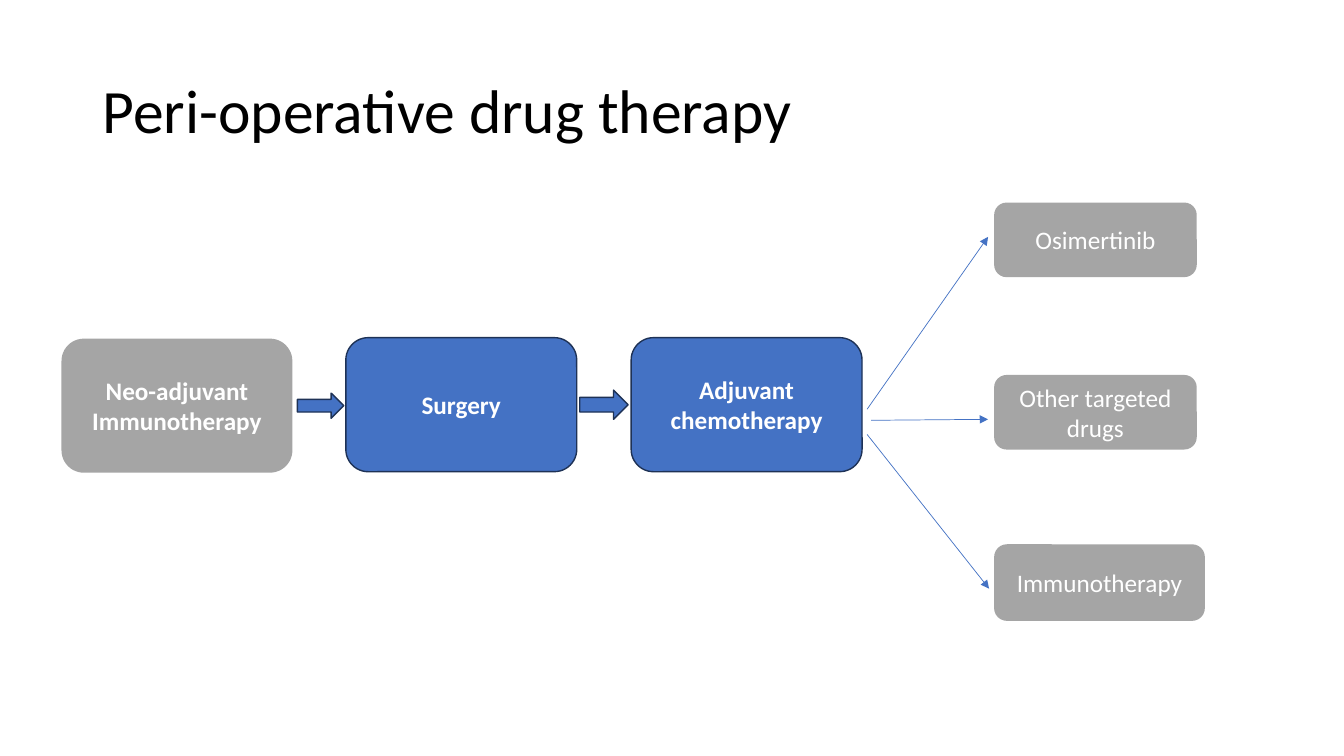
from lxml import etree
from pptx import Presentation
from pptx import util as u
from pptx.dml.color import RGBColor
from pptx.enum import shapes, text
from pptx.oxml.ns import qn

PX = 9144  # 100 px to the inch
BLUE, NAVY, GREY = "4472C4", "1E3256", "A5A5A5"
WHITE, BLACK = "FFFFFF", "000000"


def px(*lengths):
    return [u.Emu(length * PX) for length in lengths]


def color(hex_code):
    return RGBColor.from_string(hex_code)


def write(frame, lines, size, hex_code, align, bold=False):
    frame.word_wrap = True
    frame.vertical_anchor = text.MSO_ANCHOR.MIDDLE
    for i, line in enumerate(lines):
        paragraph = frame.paragraphs[0] if i == 0 else frame.add_paragraph()
        paragraph.text = line
        paragraph.alignment = align
        font = paragraph.font
        font.name, font.size, font.bold = "Calibri", u.Pt(size), bold
        font.color.rgb = color(hex_code)


def add_title(slide, title):
    heading = slide.shapes.add_textbox(*px(92, 40, 1150, 145)).text_frame
    write(heading, [title], 44, BLACK, text.PP_ALIGN.LEFT)
    heading.paragraphs[0].line_spacing = 0.9


def add_filled(slide, preset, bounds, fill, outline=None):
    shape = slide.shapes.add_shape(preset, *px(*bounds))
    shape.shadow.inherit = False
    shape.fill.solid()
    shape.fill.fore_color.rgb = color(fill)
    if outline:
        shape.line.color.rgb = color(outline)
        shape.line.width = u.Pt(1)
    else:
        shape.line.fill.background()
    return shape


def add_box(slide, bounds, lines, fill, outline=None, bold=False):
    box = add_filled(slide, shapes.MSO_SHAPE.ROUNDED_RECTANGLE, bounds, fill, outline)
    write(box.text_frame, lines, 18, WHITE, text.PP_ALIGN.CENTER, bold)


def add_block_arrow(slide, bounds):
    add_filled(slide, shapes.MSO_SHAPE.RIGHT_ARROW, bounds, BLUE, NAVY)


def add_thin_arrow(slide, start, end):
    arrow = slide.shapes.add_connector(
        shapes.MSO_CONNECTOR.STRAIGHT, *px(*start, *end))
    arrow.line.color.rgb = color(BLUE)
    arrow.line.width = u.Pt(0.5)
    etree.SubElement(arrow.line._get_or_add_ln(), qn("a:tailEnd"), type="triangle")
    etree.SubElement(arrow._element.spPr, qn("a:effectLst"))


def main():
    prs = Presentation()
    prs.slide_width, prs.slide_height = px(1333, 750)
    slide = prs.slides.add_slide(prs.slide_layouts[6])
    add_title(slide, "Peri-operative drug therapy")

    stages = [
        (61, 336, ["Neo-adjuvant", "Immunotherapy"], GREY, None),
        (343, 335, ["Surgery"], BLUE, NAVY),
        (626, 335, ["Adjuvant chemotherapy"], BLUE, NAVY),
    ]
    for left, top, lines, fill, outline in stages:
        add_box(slide, (left, top, 229, 133), lines, fill, outline, bold=True)
    for bounds in [(295, 390, 46, 25), (575, 387, 48, 29)]:
        add_block_arrow(slide, bounds)

    followups = [
        ("Osimertinib", (986, 201, 201, 74), (860, 406), (980, 235)),
        ("Other targeted drugs", (986, 372, 201, 74), (864, 417), (980, 416)),
        ("Immunotherapy", (986, 540, 209, 76), (860, 431), (981, 584)),
    ]
    for drug, bounds, start, end in followups:
        add_box(slide, bounds, [drug], GREY)
        add_thin_arrow(slide, start, end)

    prs.save("out.pptx")


if __name__ == "__main__":
    main()
